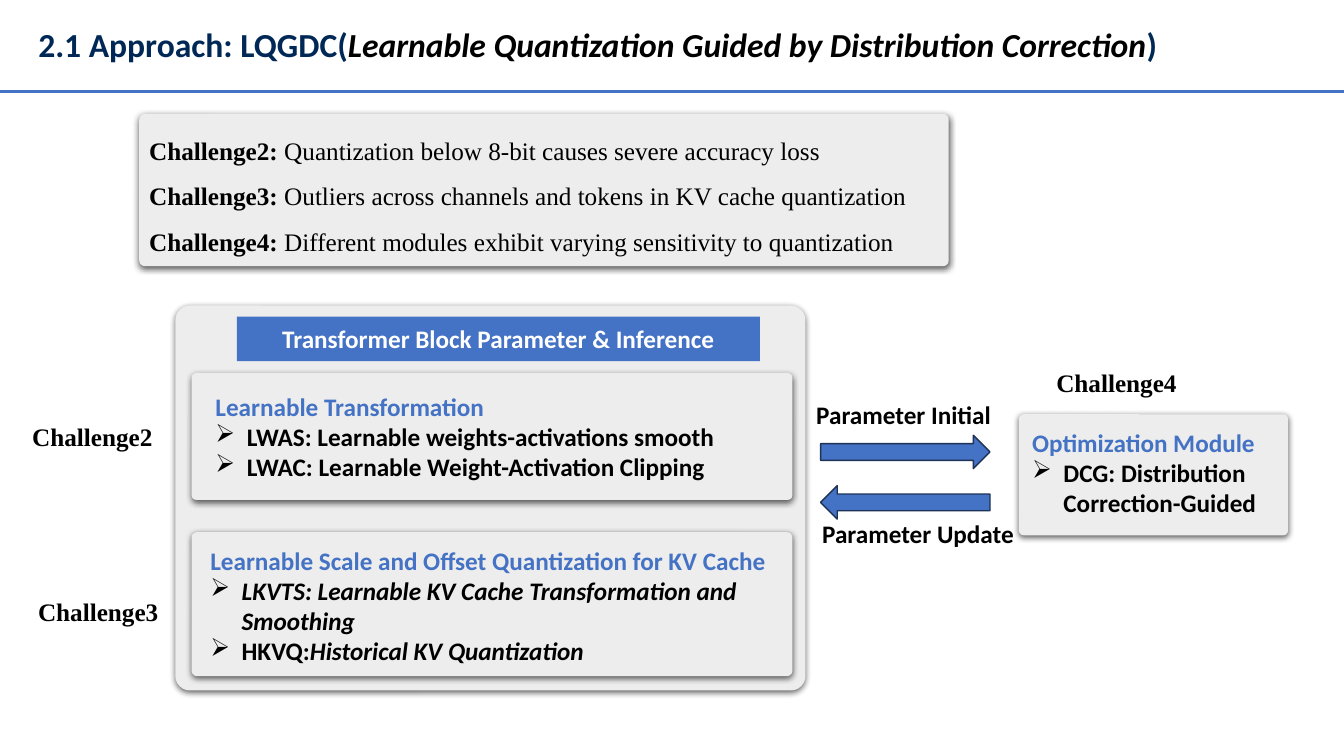
import lxml.etree
import pptx
import pptx.dml.color
import pptx.enum.shapes
import pptx.enum.text
import pptx.oxml
import pptx.oxml.ns
import pptx.util

Cm = pptx.util.Cm
Pt = pptx.util.Pt
Shape = pptx.enum.shapes.MSO_SHAPE
Align = pptx.enum.text.PP_ALIGN
Anchor = pptx.enum.text.MSO_ANCHOR
qn = pptx.oxml.ns.qn

BLUE, NAVY, BLACK, WHITE, GREY = "4472C4", "002856", "000000", "FFFFFF", "EDEDED"
SANS, SERIF = "Calibri", "Times New Roman"
SHADOW = (
    '<a:effectLst xmlns:a="http://schemas.openxmlformats.org/drawingml/2006/main">'
    '<a:outerShdw blurRad="57150" dist="19050" dir="5400000" algn="ctr" rotWithShape="0">'
    '<a:srgbClr val="000000"><a:alpha val="63000"/></a:srgbClr>'
    '</a:outerShdw></a:effectLst>'
)


def color(value):
    """Return the colour for a hex string."""
    return pptx.dml.color.RGBColor.from_string(value)


def add_span(para, text, ink=BLACK, font=SANS, size=18, bold=True, italic=False):
    """Add one formatted run to a paragraph."""
    span = para.add_run()
    span.text = text
    span.font.name = font
    span.font.size = Pt(size)
    span.font.bold = bold
    span.font.italic = italic
    span.font.color.rgb = color(ink)


def add_bullet(para):
    """Give a paragraph an arrow bullet with a hanging indent."""
    properties = para._p.get_or_add_pPr()
    properties.set("marL", str(Cm(0.79)))
    properties.set("indent", str(-Cm(0.79)))
    lxml.etree.SubElement(properties, qn("a:buChar")).set("char", "➢")


def add_text(slide, place, lines=1):
    """Add a wrapping text box and return its paragraphs."""
    frame = slide.shapes.add_textbox(*map(Cm, place)).text_frame
    frame.word_wrap = True
    return [frame.paragraphs[0]] + [frame.add_paragraph() for _ in range(lines - 1)]


def add_label(slide, place, text, font):
    """Add a one-line bold label."""
    add_span(add_text(slide, place)[0], text, font=font)


def add_filled(slide, kind, place, fill, outline=None):
    """Add a flat filled shape, with a thin outline if a colour is given."""
    shape = slide.shapes.add_shape(kind, *map(Cm, place))
    shape.shadow.inherit = False
    shape.fill.solid()
    shape.fill.fore_color.rgb = color(fill)
    if outline:
        shape.line.color.rgb = color(outline)
        shape.line.width = Pt(1)
    else:
        shape.line.fill.background()
    return shape


def add_card(slide, place):
    """Add a grey rounded card with a soft shadow below it."""
    card = add_filled(slide, Shape.ROUNDED_RECTANGLE, place, GREY)
    card.adjustments[0] = 0.038
    properties = card._element.spPr
    properties.replace(properties.find(qn("a:effectLst")), pptx.oxml.parse_xml(SHADOW))


def add_module(slide, place, heading, items):
    """Add a blue heading with bulleted items made of (text, italic) spans."""
    first, *rest = add_text(slide, place, len(items) + 1)
    add_span(first, heading, BLUE)
    for para, spans in zip(rest, items):
        add_bullet(para)
        for text, italic in spans:
            add_span(para, text, italic=italic)


def add_challenges(slide, place, challenges):
    """Add the list of challenges, each with a bold name."""
    for para, (name, text) in zip(add_text(slide, place, len(challenges)), challenges):
        para.line_spacing = 1.5
        add_span(para, name + ": ", font=SERIF)
        add_span(para, text, font=SERIF, bold=False)


def add_title(slide):
    """Place and fill the title and draw the rule below it."""
    title = slide.shapes.title
    title.left, title.top, title.width, title.height = map(Cm, (0.71, 0.36, 32.39, 1.63))
    frame = title.text_frame
    frame.word_wrap = True
    frame.auto_size = pptx.enum.text.MSO_AUTO_SIZE.NONE
    frame.vertical_anchor = Anchor.MIDDLE
    para = frame.paragraphs[0]
    para.alignment = Align.LEFT
    para.line_spacing = 0.9
    add_span(para, "2.1 Approach: LQGDC(", NAVY, size=24)
    add_span(para, "Learnable Quantization Guided by Distribution Correction", size=24, italic=True)
    add_span(para, ")", NAVY, size=24)
    rule = slide.shapes.add_connector(
        pptx.enum.shapes.MSO_CONNECTOR.STRAIGHT, Cm(0), Cm(2.31), Cm(33.87), Cm(2.31))
    rule.line.color.rgb = color(BLUE)
    rule.line.width = Pt(1.75)
    lxml.etree.SubElement(rule._element.spPr, qn("a:effectLst"))


def add_banner(slide, place, text):
    """Add the blue heading bar of the transformer block."""
    banner = add_filled(slide, Shape.ROUNDED_RECTANGLE, place, BLUE)
    banner.adjustments[0] = 0.005
    banner.text_frame.vertical_anchor = Anchor.MIDDLE
    para = banner.text_frame.paragraphs[0]
    para.alignment = Align.CENTER
    add_span(para, text, WHITE)


def main():
    """Build the slide and save it."""
    deck = pptx.Presentation()
    deck.slide_width, deck.slide_height = Cm(33.87), Cm(19.05)
    slide = deck.slides.add_slide(deck.slide_layouts.get_by_name("Title Only"))
    add_title(slide)

    add_card(slide, (3.51, 2.87, 20.4, 3.84))
    add_challenges(slide, (3.51, 2.9, 20.75, 3.58), [
        ("Challenge2", "Quantization below 8-bit causes severe accuracy loss"),
        ("Challenge3", "Outliers across channels and tokens in KV cache quantization"),
        ("Challenge4", "Different modules exhibit varying sensitivity to quantization"),
    ])

    add_card(slide, (4.42, 7.7, 15.88, 9.7))
    add_banner(slide, (5.97, 7.98, 13.18, 1.12), "Transformer Block Parameter & Inference")
    add_card(slide, (4.83, 9.4, 15.14, 3.2))
    add_module(slide, (5.18, 9.73, 14.78, 2.57), "Learnable Transformation", [
        [("LWAS: Learnable weights-activations smooth", False)],
        [("LWAC: Learnable Weight-Activation Clipping", False)],
    ])
    add_card(slide, (4.83, 13.41, 15.14, 3.63))
    add_module(slide, (5.05, 13.61, 14.71, 3.33),
               "Learnable Scale and Offset Quantization for KV Cache", [
        [("LKVTS: Learnable KV Cache Transformation and Smoothing", True)],
        [("HKVQ:", False), ("Historical KV Quantization", True)],
    ])
    add_card(slide, (25.68, 10.44, 6.78, 3.05))
    add_module(slide, (25.76, 10.64, 6.43, 2.57), "Optimization Module", [
        [("DCG: Distribution Correction-Guided", False)],
    ])

    for kind, top in ((Shape.RIGHT_ARROW, 10.97), (Shape.LEFT_ARROW, 12.24)):
        add_filled(slide, kind, (20.68, top, 4.27, 0.84), BLUE, "1E3256")
    for text, font, left, top, width in (
        ("Parameter Initial", SANS, 20.32, 9.93, 5.38),
        ("Parameter Update", SANS, 20.47, 12.93, 5.38),
        ("Challenge2", SERIF, 0.56, 10.49, 3.58),
        ("Challenge3", SERIF, 0.71, 14.91, 3.58),
        ("Challenge4", SERIF, 26.37, 9.14, 4.11),
    ):
        add_label(slide, (left, top, width, 1.02), text, font)

    deck.save("out.pptx")


if __name__ == "__main__":
    main()
